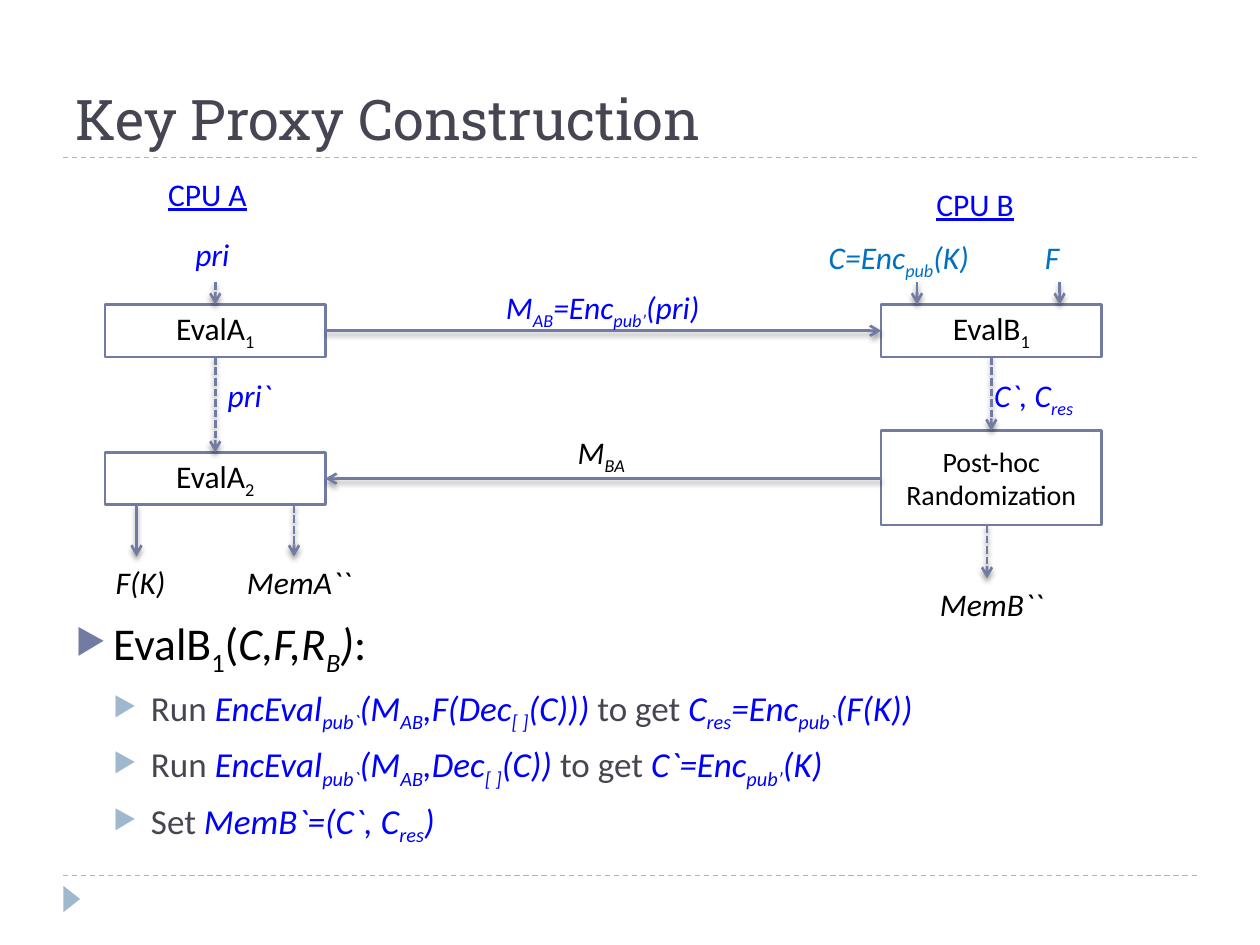
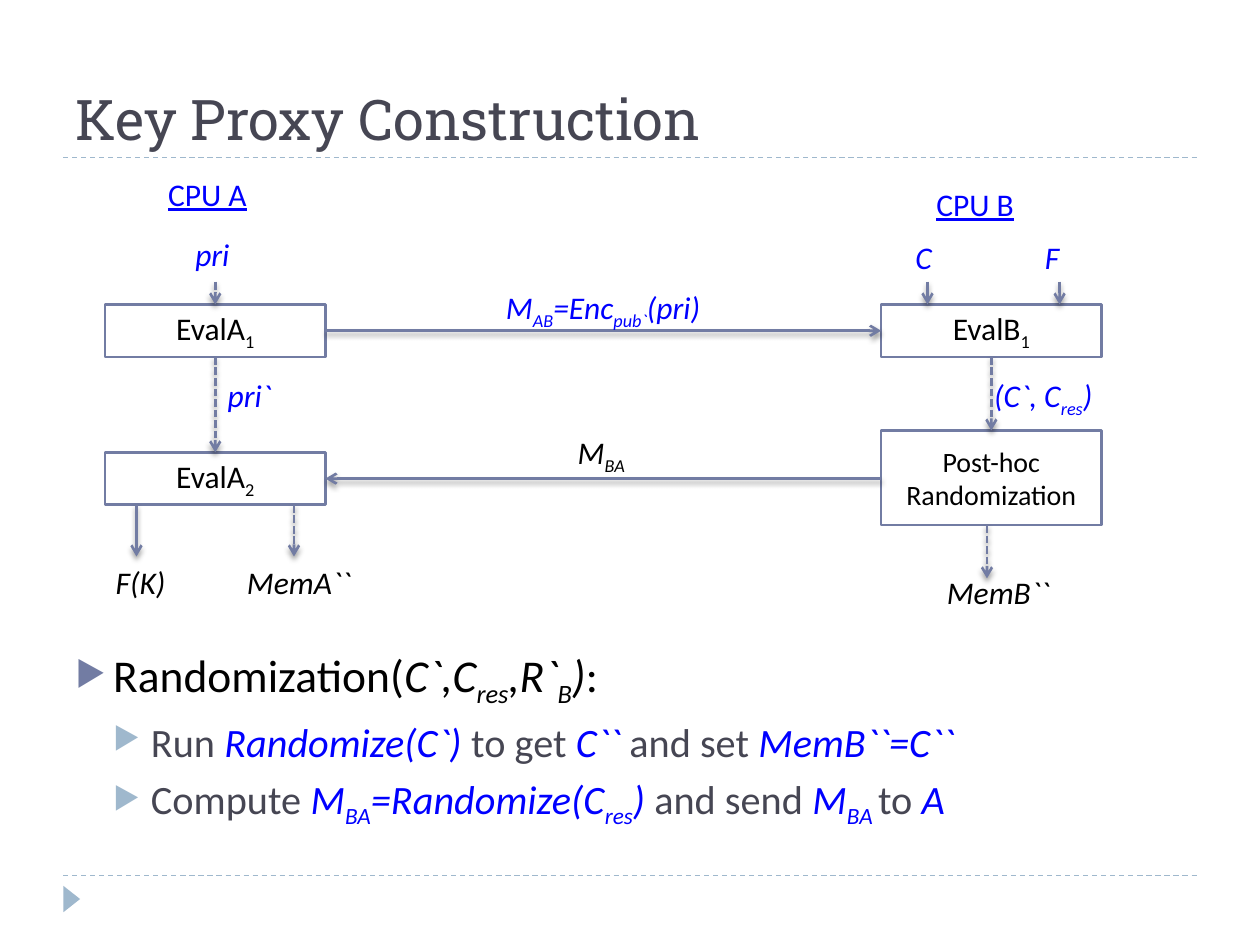
from lxml.etree import SubElement as Sub
from pptx import Presentation
from pptx.dml.color import RGBColor as RGB
from pptx.enum.dml import MSO_LINE as Dash
from pptx.enum.shapes import MSO_CONNECTOR as Conn, MSO_SHAPE as Kind
from pptx.enum.text import MSO_ANCHOR as Anchor, MSO_AUTO_SIZE as Auto, PP_ALIGN as Align
from pptx.oxml.ns import qn
from pptx.util import Pt

INK = RGB(0x46, 0x46, 0x53)
SLATE = RGB(0x72, 0x7C, 0xA3)
MIST = RGB(0x9F, 0xB8, 0xCD)
BLUE = RGB(0x00, 0x00, 0xFF)
AZURE = RGB(0x00, 0x70, 0xC0)
BLACK = RGB(0x00, 0x00, 0x00)
WHITE = RGB(0xFF, 0xFF, 0xFF)

LEFT, RIGHT, WIDE = 60, 503.5, 126
MID_A, MID_B = LEFT + WIDE / 2, RIGHT + WIDE / 2
TOP, LOW, POST = 174, 258.5, 246
THIN, TALL = 30, 54
ROW_1, ROW_2 = TOP + THIN / 2, LOW + THIN / 2


class Deck:
    """Draws styled elements on the current slide; in text, * toggles italic and _ toggles subscript."""

    def __init__(self):
        self.prs = Presentation()
        self.prs.slide_width, self.prs.slide_height = Pt(720), Pt(540)
        self.font = "Calibri"

    def page(self, title):
        self.slide = self.prs.slides.add_slide(self.prs.slide_layouts[6])
        self.shapes = self.slide.shapes
        for y in (500.5, 90):
            self.line(36, y, 684, y, MIST, 0.75, Dash.DASH)
        mark = self.shape(Kind.ISOSCELES_TRIANGLE, 33.5, 509, 15, 9.5, MIST)
        mark.line.fill.background()
        mark.rotation = 90
        frame = self.frame(36, 12, 648, 78)
        frame.vertical_anchor = Anchor.BOTTOM
        self.text(frame.paragraphs[0], title, 32, INK, font="Roboto Slab")

    def frame(self, x, y, w, h, wrap=True):
        frame = self.shapes.add_textbox(Pt(x), Pt(y), Pt(w), Pt(h)).text_frame
        frame.word_wrap = wrap
        return frame

    def text(self, para, words, size, color, accent=None, font=None, under=None):
        for i, part in enumerate(words.split("*")):
            for j, bit in enumerate(part.split("_")):
                if not bit:
                    continue
                run = para.add_run()
                run.text = bit
                face = run.font
                face.name, face.size = font or self.font, Pt(size)
                face.italic, face.underline = i % 2 == 1, under
                face.color.rgb = accent if accent is not None and i % 2 else color
                if j % 2:
                    run._r.get_or_add_rPr().set("baseline", "-25000")

    def label(self, words, x, y, w, color=BLACK, under=None):
        frame = self.frame(x, y, w, 29, False)
        frame.auto_size = Auto.SHAPE_TO_FIT_TEXT
        self.text(frame.paragraphs[0], words, 18, color, under=under)

    def shape(self, kind, x, y, w, h, fill):
        shape = self.shapes.add_shape(kind, Pt(x), Pt(y), Pt(w), Pt(h))
        shape.shadow.inherit = False
        shape.fill.solid()
        shape.fill.fore_color.rgb = fill
        return shape

    def box(self, words, x, y, h=THIN, size=18):
        box = self.shape(Kind.RECTANGLE, x, y, WIDE, h, WHITE)
        box.line.color.rgb, box.line.width = SLATE, Pt(1.5)
        frame = box.text_frame
        frame.word_wrap, frame.vertical_anchor = True, Anchor.MIDDLE
        para = frame.paragraphs[0]
        para.alignment = Align.CENTER
        self.text(para, words, size, BLACK)

    def line(self, x1, y1, x2, y2, color, width, dash=None):
        line = self.shapes.add_connector(Conn.STRAIGHT, Pt(x1), Pt(y1), Pt(x2), Pt(y2))
        line.line.color.rgb, line.line.width = color, Pt(width)
        if dash:
            line.line.dash_style = dash
        props = line._element.spPr
        return props.find(qn("a:ln")), Sub(props, qn("a:effectLst"))

    def arrow(self, x1, y1, x2, y2, dash=None):
        stroke, effect = self.line(x1, y1, x2, y2, SLATE, 1.5, dash)
        Sub(stroke, qn("a:tailEnd"), type="arrow")
        shade = Sub(effect, qn("a:outerShdw"), blurRad=str(Pt(3)), dist=str(Pt(2)),
                    dir="5400000", rotWithShape="0")
        tone = Sub(shade, qn("a:srgbClr"), val=str(BLACK))
        Sub(tone, qn("a:alpha"), val="40000")

    def down(self, x, y1, y2, dash=Dash.SQUARE_DOT):
        self.arrow(x, y1, x, y2, dash)

    def bullets(self, y, head, items, size):
        frame = self.frame(36, y, 648, 156)
        para = frame.paragraphs[0]
        self.bullet(para, 0, 6, SLATE)
        self.text(para, head, 26, BLACK)
        for item in items:
            para = frame.add_paragraph()
            self.bullet(para, 1, 5, MIST)
            self.text(para, item, size, INK, BLUE)

    def bullet(self, para, level, gap, color):
        para.level, para.space_before = level, Pt(gap)
        props = para._p.get_or_add_pPr()
        props.set("marL", str(Pt(21.6 * (level + 1))))
        props.set("indent", str(Pt(-21.6)))
        Sub(Sub(props, qn("a:buClr")), qn("a:srgbClr"), val=str(color))
        Sub(props, qn("a:buSzPct"), val="76000")
        Sub(props, qn("a:buChar"), char="▶")

    def flow(self, message, inputs, state, memory):
        self.page("Key Proxy Construction")
        self.label("CPU A", 89, 96.5, 66, BLUE, True)
        self.label("CPU B", 528, 102, 66, BLUE, True)

        self.box("EvalA_1_", LEFT, TOP)
        self.box("EvalA_2_", LEFT, LOW)
        self.box("EvalB_1_", RIGHT, TOP)
        self.box("Post-hoc Randomization", RIGHT, POST, TALL, 16)

        self.arrow(LEFT + WIDE, ROW_1, RIGHT, ROW_1)
        self.arrow(RIGHT, ROW_2, LEFT + WIDE, ROW_2)
        self.label(message, 282, 161, 142.5, BLUE)
        self.label("*M_BA_*", 323, 244, 44.5)

        self.down(MID_A, 161, TOP)
        self.down(MID_A, TOP + THIN, LOW)
        self.down(MID_B, TOP + THIN, POST)
        self.label("*pri*", 104.5, 131, 36, BLUE)
        self.label("*pri`*", 123, 211.5, 41, BLUE)
        self.label(state, 561, 211.5, 74, BLUE)
        for words, x, w, tip, color in inputs:
            self.label(words, x, 132.5, w, color)
            self.down(tip, 161, TOP, None)

        base = LOW + THIN
        self.down(78, base, 318, None)
        self.down(168, base, 318)
        self.down(564, POST + TALL, 330.5)
        self.label("*F(K)*", 59, 318, 46)
        self.label("*MemA``*", 134, 318, 75.5)
        self.label("*MemB``*", *memory)


def main():
    deck = Deck()
    deck.flow("*M_AB_=Enc_pub’_(pri)*",
              [("*C=Enc_pub_(K)*", 466.5, 114, 524, AZURE), ("*F*", 590, 26, 605.5, AZURE)],
              "*C`, C_res_*", (530, 330.5, 79))
    deck.bullets(348, "EvalB_1_(*C,F,R_B_)*:", [
        "Run *EncEval_pub`_(M_AB_,F(Dec_[ ]_(C))) *to get *C_res_=Enc_pub`_(F(K))*",
        "Run *EncEval_pub`_(M_AB_,Dec_[ ]_(C)) *to get *C`=Enc_pub’_(K)*",
        "Set *MemB`=(C`, C_res_)*",
    ], 20)

    deck.flow("*M_AB_=Enc_pub`_(pri)*",
              [("*C*", 516, 27, 530, BLUE), ("*F*", 590, 25, 605.5, BLUE)],
              "*(C`, C_res_)*", (534, 324, 75))
    deck.bullets(366, "Randomization(*C`,C_res_,R`_B_)*:", [
        "Run *Randomize(C`)* to get *C`` *and set *MemB``=C``*",
        "Compute *M_BA_=Randomize(C_res_)* and send *M_BA _*to *A*",
    ], 23)
    deck.prs.save("out.pptx")


if __name__ == "__main__":
    main()
